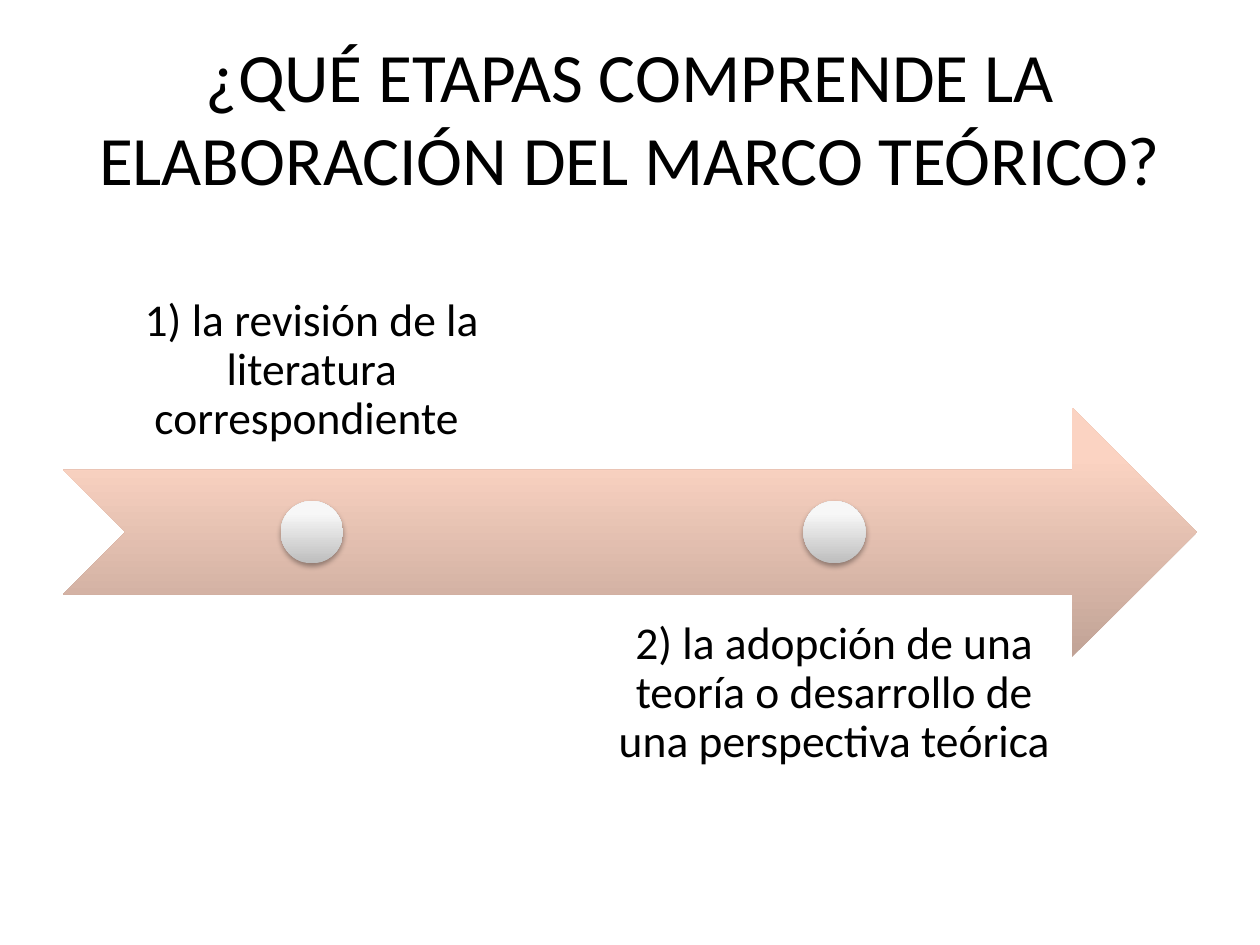
from dataclasses import dataclass

from lxml import etree
from pptx import Presentation
from pptx import util as u
from pptx.dml.color import RGBColor
from pptx.enum import shapes, text
from pptx.oxml import ns

HUES = {
    "ink": "000000",
    "arrow low": "C1A396", "arrow mid": "FBD3C2", "arrow top": "FDD4C2",
    "dot low": "BEBEBE", "dot mid": "F7F7F7", "dot top": "F8F8F8",
}
FONT = "Calibri"
TITLE = "¿QUÉ ETAPAS COMPRENDE LA ELABORACIÓN DEL MARCO TEÓRICO?"

# Layout in points
LEFT, WIDE = 36, 648
BAND = 142.5                 # height of the arrow and of each label
TOP = 126                    # top of the first label
MID = TOP + 1.5 * BAND + 35.5  # axis of the arrow
STEP = 284.4                 # label width
DOT = BAND / 4


@dataclass
class Stage:
    label: str
    top: float
    anchor: text.MSO_ANCHOR


STAGES = [
    Stage("1) la revisión de la literatura correspondiente ",
          TOP, text.MSO_ANCHOR.BOTTOM),
    Stage("2) la adopción de una teoría o desarrollo de una perspectiva teórica",
          TOP + 1.5 * BAND, text.MSO_ANCHOR.TOP),
]
MID = TOP + 1.25 * BAND  + DOT * 0 + BAND / 2 - BAND / 4


def node(up, tag: str, **attrs):
    return etree.SubElement(up, ns.qn(tag), attrs)


def write(slide, words: str, box: tuple, size: float,
          anchor: text.MSO_ANCHOR, pad: float | None = None,
          lead: float = 1.0) -> None:
    frame = slide.shapes.add_textbox(*map(u.Pt, box)).text_frame
    frame.word_wrap = True
    frame.vertical_anchor = anchor
    if pad is not None:
        frame.margin_left = frame.margin_right = u.Pt(pad)
        frame.margin_top = frame.margin_bottom = u.Pt(pad)
    frame.text = words
    para = frame.paragraphs[0]
    para.alignment = text.PP_ALIGN.CENTER
    para.line_spacing = lead
    font = para.runs[0].font
    font.name, font.size = FONT, u.Pt(size)
    font.color.rgb = RGBColor.from_string(HUES["ink"])


def shade(slide, kind: shapes.MSO_SHAPE, box: tuple, name: str):
    """Draw a borderless shape whose gradient runs upwards."""
    shape = slide.shapes.add_shape(kind, *map(u.Pt, box))
    shape.shadow.inherit = False
    shape.line.fill.background()
    shape.fill.gradient()
    grad = shape.fill._xPr.find(ns.qn("a:gradFill"))
    for child in list(grad):
        grad.remove(child)
    stops = node(grad, "a:gsLst")
    for part, place in (("low", 0), ("mid", 80), ("top", 100)):
        stop = node(stops, "a:gs", pos=str(place * 1000))
        node(stop, "a:srgbClr", val=HUES[f"{name} {part}"])
    node(grad, "a:lin", ang=str(270 * 60000), scaled="0")
    return shape


def drop(shape) -> None:
    """Cast a soft shadow straight down."""
    fx = shape._element.spPr.find(ns.qn("a:effectLst"))
    cast = node(fx, "a:outerShdw", blurRad=str(u.Pt(3.1)),
                dist=str(u.Pt(1.8)), dir=str(90 * 60000), rotWithShape="0")
    hue = node(cast, "a:srgbClr", val=HUES["ink"])
    node(hue, "a:alpha", val="35000")


def main() -> None:
    deck = Presentation()
    deck.slide_width, deck.slide_height = u.Pt(720), u.Pt(540)
    slide = deck.slides.add_slide(deck.slide_layouts[6])

    # Title
    write(slide, TITLE, (LEFT, 21.6, WIDE, 90), 39.6, text.MSO_ANCHOR.MIDDLE)

    # Arrow
    mid = TOP + 1.25 * BAND
    shade(slide, shapes.MSO_SHAPE.NOTCHED_RIGHT_ARROW,
          (LEFT, mid - BAND / 2, WIDE, BAND), "arrow")

    # Stages: a label and a dot each
    for i, stage in enumerate(STAGES):
        left = LEFT + i * STEP * 1.05
        write(slide, stage.label, (left, stage.top, STEP, BAND), 26,
              stage.anchor, pad=14.4, lead=0.9)
        drop(shade(slide, shapes.MSO_SHAPE.OVAL,
                   (left + (STEP - DOT) / 2, mid - DOT / 2, DOT, DOT), "dot"))

    deck.save("out.pptx")


if __name__ == "__main__":
    main()
